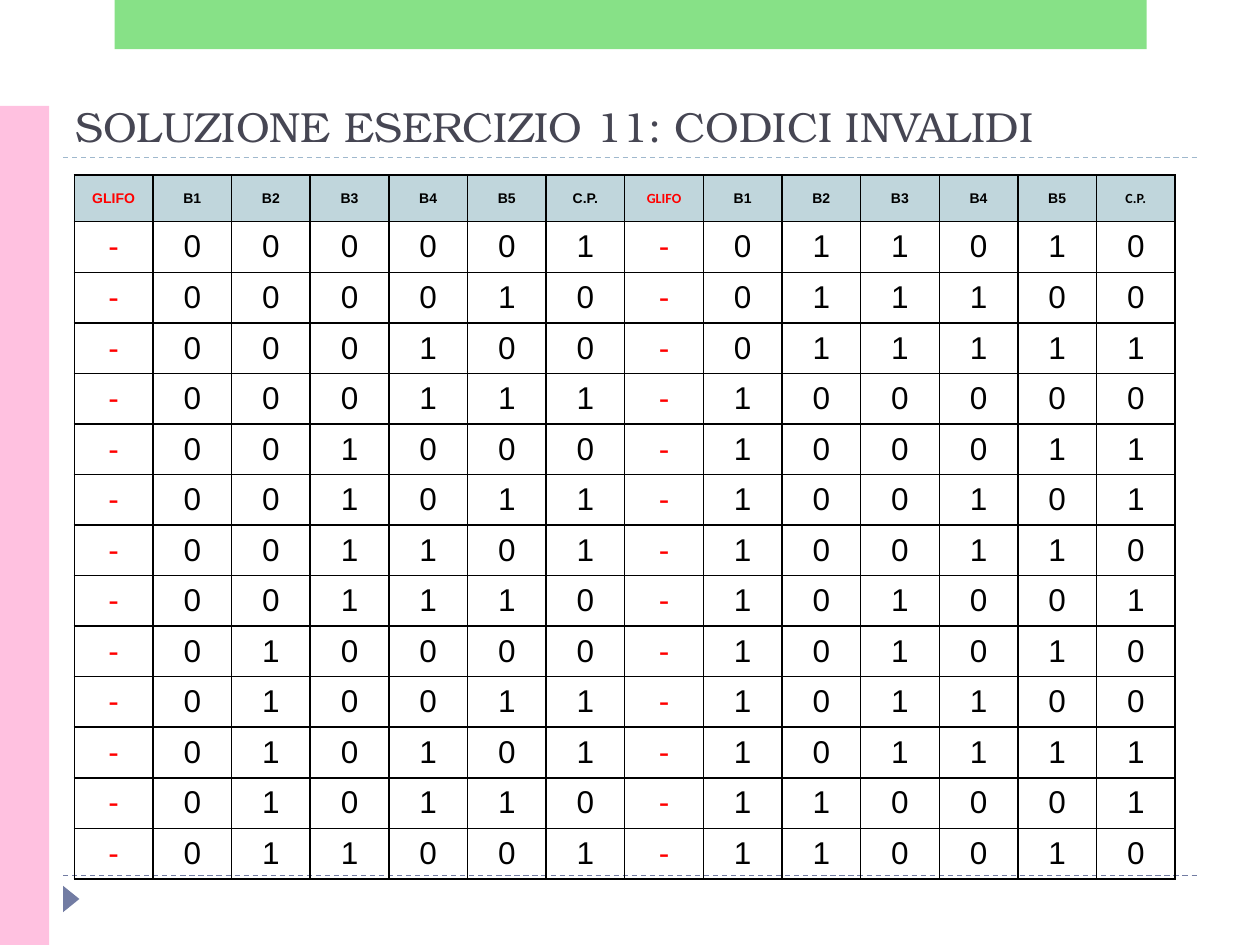
from dataclasses import dataclass

from lxml import etree
from pptx import Presentation
from pptx.dml.color import RGBColor
from pptx.enum.dml import MSO_LINE
from pptx.enum.shapes import MSO_CONNECTOR, MSO_SHAPE
from pptx.enum.text import MSO_ANCHOR, MSO_AUTO_SIZE, PP_ALIGN
from pptx.oxml.ns import qn
from pptx.util import Inches, Pt

STRAIGHT = MSO_CONNECTOR.STRAIGHT
RECTANGLE = MSO_SHAPE.RECTANGLE
TRIANGLE = MSO_SHAPE.ISOSCELES_TRIANGLE
DASH = MSO_LINE.DASH
MIDDLE, BOTTOM = MSO_ANCHOR.MIDDLE, MSO_ANCHOR.BOTTOM
CENTER, LEFT = PP_ALIGN.CENTER, PP_ALIGN.LEFT


@dataclass(frozen=True)
class Theme:
    title: str = "464653"
    accent: str = "727CA3"
    rule: str = "9FB8CD"
    side_band: str = "FFC1E0"
    top_band: str = "62D862"
    header: str = "C0D6DC"
    glyph: str = "FF0000"
    ink: str = "000000"
    title_font: str = "TeX Gyre Bonum"
    table_font: str = "Arial"
    alternate_font: str = "Calibri"
    title_size: int = 24
    header_size: int = 8
    digit_size: int = 18


theme = Theme()


def style_font(font, name, size, color, bold=False):
    font.name = name
    font.size = Pt(size)
    font.bold = bold
    font.color.rgb = RGBColor.from_string(color)


def add_borders(cell):
    properties = cell._tc.get_or_add_tcPr()
    for side in ("a:lnL", "a:lnR", "a:lnT", "a:lnB"):
        line = etree.SubElement(properties, qn(side), w=str(Pt(1)))
        fill = etree.SubElement(line, qn("a:solidFill"))
        etree.SubElement(fill, qn("a:srgbClr"), val=theme.ink)


deck = Presentation()
deck.slide_width = Inches(10)
deck.slide_height = Inches(7.5)
page = deck.slides.add_slide(deck.slide_layouts[5])

# Dashed rules
for y, color in ((6.95, theme.accent), (1.25, theme.rule)):
    rule = page.shapes.add_connector(STRAIGHT, Inches(0.5), Inches(y), Inches(9.5), Inches(y))
    rule.line.color.rgb = RGBColor.from_string(color)
    rule.line.width = Pt(0.75)
    rule.line.dash_style = DASH
    etree.SubElement(rule._element.spPr, qn("a:effectLst"))

# Footer marker and colour bands
decorations = (
    (TRIANGLE, (0.46, 7.07, 0.21, 0.13), theme.accent, 90, 100),
    (RECTANGLE, (0, 0.84, 0.39, 6.66), theme.side_band, 0, 100),
    (RECTANGLE, (0.91, 0, 8.19, 0.39), theme.top_band, 0, 76),
)
for kind, place, color, rotation, opacity in decorations:
    shape = page.shapes.add_shape(kind, *map(Inches, place))
    shape.shadow.inherit = False
    shape.rotation = rotation
    shape.line.fill.background()
    shape.fill.solid()
    shape.fill.fore_color.rgb = RGBColor.from_string(color)
    if opacity < 100:
        tint = shape._element.spPr.find(".//" + qn("a:srgbClr"))
        etree.SubElement(tint, qn("a:alpha"), val=str(opacity * 1000))

# Title
title = page.shapes.title
title.left, title.top, title.width, title.height = map(Inches, (0.5, 0.55, 9, 0.7))
frame = title.text_frame
frame.text = "SOLUZIONE ESERCIZIO 11: CODICI INVALIDI"
frame.auto_size = MSO_AUTO_SIZE.NONE
frame.vertical_anchor = BOTTOM
para = frame.paragraphs[0]
para.alignment = LEFT
style_font(para.runs[0].font, theme.title_font, theme.title_size, theme.title)

# Invalid codes 0 to 25 with an odd parity bit, in two halves side by side
CODES_PER_HALF = 13
codes = []
for number in range(2 * CODES_PER_HALF):
    bits = f"{number:05b}"
    parity = "1" if bits.count("1") % 2 == 0 else "0"
    codes.append(["-", *bits, parity])
headings = ["GLIFO", "B1", "B2", "B3", "B4", "B5", "C.P."]
rows = [headings * 2]
rows += [left + right for left, right in zip(codes[:CODES_PER_HALF], codes[CODES_PER_HALF:])]

HALF = len(headings)
ALTERNATE_HEADINGS = (HALF, 2 * HALF - 1)
place = tuple(map(Inches, (0.59, 1.39, 8.74, 5.59)))
table = page.shapes.add_table(len(rows), 2 * HALF, *place).table
table.first_row = False
table.horz_banding = False
for column in table.columns:
    column.width = Inches(8.74 / (2 * HALF))
for index, row in enumerate(table.rows):
    row.height = Inches((5.59 - 0.37) / CODES_PER_HALF if index else 0.37)

for row_index, values in enumerate(rows):
    is_header = row_index == 0
    for column_index, value in enumerate(values):
        cell = table.cell(row_index, column_index)
        add_borders(cell)
        if is_header:
            cell.fill.solid()
            cell.fill.fore_color.rgb = RGBColor.from_string(theme.header)
        else:
            cell.fill.background()
        cell.vertical_anchor = MIDDLE
        cell.text_frame.text = value
        para = cell.text_frame.paragraphs[0]
        para.alignment = CENTER
        alternate = is_header and column_index in ALTERNATE_HEADINGS
        style_font(
            para.runs[0].font,
            theme.alternate_font if alternate else theme.table_font,
            theme.header_size if is_header else theme.digit_size,
            theme.glyph if column_index % HALF == 0 else theme.ink,
            bold=is_header,
        )

deck.save("out.pptx")
